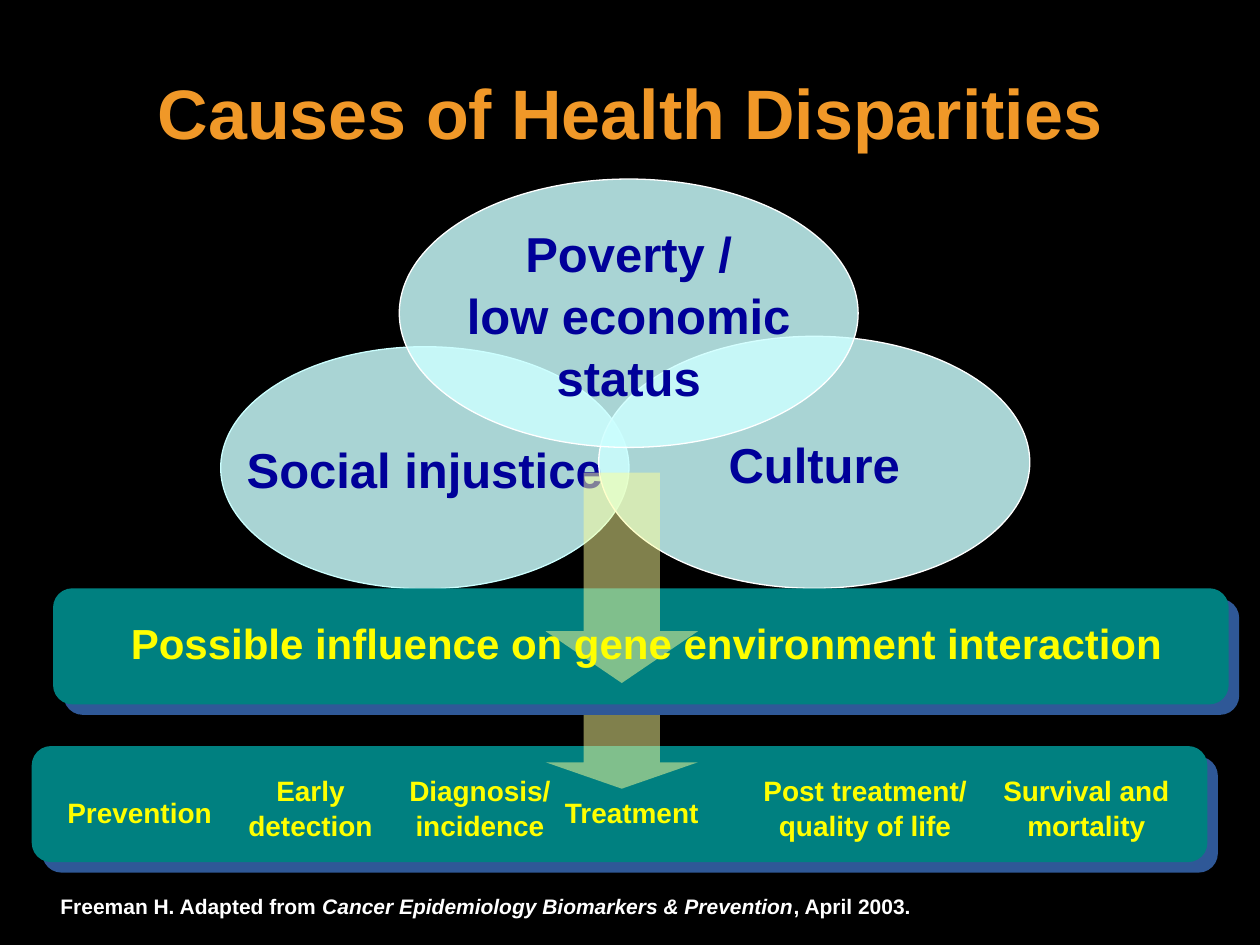
import pptx
import pptx.dml.color
import pptx.enum.shapes
import pptx.enum.text
import pptx.oxml
import pptx.oxml.ns
import pptx.util
from dataclasses import dataclass

Cm = pptx.util.Cm
Pt = pptx.util.Pt
SHAPE = pptx.enum.shapes.MSO_SHAPE
ALIGN = pptx.enum.text.PP_ALIGN
ANCHOR = pptx.enum.text.MSO_ANCHOR


@dataclass(frozen=True)
class Theme:
    font: str = "Arial"
    line_spacing: float = 1.05
    background: str = "000000"
    title: str = "F09828"
    label: str = "FFFF00"
    cause_text: str = "000099"
    source: str = "FFFFFF"
    band: str = "008080"
    band_shadow: str = "2F5897"
    ellipse: str = "CCFFFF"
    outline: str = "FFFFFF"
    arrow: str = "FFFF99"
    title_size: int = 40
    cause_size: int = 28
    band_size: int = 24
    stage_size: int = 16
    source_size: int = 12


THEME = Theme()


def color(code):
    return pptx.dml.color.RGBColor.from_string(code)


def style_paragraph(para, size, code, align=ALIGN.CENTER):
    para.alignment = align
    para.line_spacing = THEME.line_spacing
    para.font.name = THEME.font
    para.font.size = Pt(size)
    para.font.bold = True
    para.font.color.rgb = color(code)


def add_label(page, place, text, size, code):
    box = page.shapes.add_textbox(*map(Cm, place))
    box.text_frame.word_wrap = True
    para = box.text_frame.paragraphs[0]
    para.text = text
    style_paragraph(para, size, code)
    return para


def add_filled(page, kind, place, code, opacity=100):
    shape = page.shapes.add_shape(kind, *map(Cm, place))
    shape.shadow.inherit = False
    shape.fill.solid()
    shape.fill.fore_color.rgb = color(code)
    shape.line.fill.background()
    if opacity < 100:
        fill = shape.fill._xPr.find(pptx.oxml.ns.qn("a:solidFill"))
        fill[0].append(pptx.oxml.parse_xml(
            f'<a:alpha {pptx.oxml.ns.nsdecls("a")} val="{opacity * 1000}"/>'))
    return shape


def add_band(page, left, top):
    band = add_filled(page, SHAPE.FLOWCHART_ALTERNATE_PROCESS,
                      (left, top, 23.7, 2.34), THEME.band)
    effects = band._element.spPr.find(pptx.oxml.ns.qn("a:effectLst"))
    effects.append(pptx.oxml.parse_xml(
        f'<a:outerShdw {pptx.oxml.ns.nsdecls("a")} blurRad="0" dist="{Pt(8.5)}" '
        f'dir="2700000" algn="ctr" rotWithShape="0">'
        f'<a:srgbClr val="{THEME.band_shadow}"/></a:outerShdw>'))


def add_cause(page, place, text, outline):
    ellipse = add_filled(page, SHAPE.OVAL, place, THEME.ellipse, 83)
    ellipse.line.color.rgb = color(outline)
    ellipse.line.width = Pt(0.75)
    frame = ellipse.text_frame
    frame.word_wrap = False
    frame.vertical_anchor = ANCHOR.MIDDLE
    frame.paragraphs[0].text = text
    style_paragraph(frame.paragraphs[0], THEME.cause_size, THEME.cause_text)


def add_arrow(page, top, height, head):
    arrow = add_filled(page, SHAPE.DOWN_ARROW, (11, top, 3.07, height), THEME.arrow, 50)
    arrow.adjustments[0] = 0.5
    arrow.adjustments[1] = head


def add_source(page):
    para = add_label(page, (0.97, 17.86, 18.39, 0.76), "",
                     THEME.source_size, THEME.source)
    para.alignment = ALIGN.LEFT
    for text, italic in (("Freeman H. Adapted from ", False),
                         ("Cancer Epidemiology Biomarkers & Prevention", True),
                         (", April 2003.", False)):
        span = para.add_run()
        span.text = text
        span.font.italic = italic


def main():
    deck = pptx.Presentation()
    deck.slide_width, deck.slide_height = Cm(25.4), Cm(19.05)
    page = deck.slides.add_slide(deck.slide_layouts[6])
    page.background.fill.solid()
    page.background.fill.fore_color.rgb = color(THEME.background)

    # Title and source
    add_label(page, (0, 1.19, 25.4, 1.96), "Causes of Health Disparities",
              THEME.title_size, THEME.title)
    add_source(page)

    # Stages of care: one-line labels sit lower than two-line ones
    add_band(page, 0.64, 15.04)
    one_line, two_lines = (15.88, 0.94), (15.44, 1.63)
    for text, left, width, (top, height) in (
            ("Prevention", 0.81, 4.01, one_line),
            ("Early detection", 4.42, 3.68, two_lines),
            ("Diagnosis/\nincidence", 7.16, 5.03, two_lines),
            ("Treatment", 11.07, 3.33, one_line),
            ("Post treatment/\nquality of life", 15.04, 4.8, two_lines),
            ("Survival and mortality", 19.69, 4.42, two_lines)):
        add_label(page, (left, top, width, height), text,
                  THEME.stage_size, THEME.label)

    # Overlapping causes
    add_cause(page, (4.45, 6.99, 8.23, 4.88), "Social injustice", THEME.ellipse)
    add_cause(page, (12.07, 6.78, 8.69, 5.08), "Culture", THEME.outline)
    add_cause(page, (8.05, 3.61, 9.25, 5.41),
              "Poverty /\nlow economic\nstatus", THEME.outline)

    # Gene environment band between the two arrows
    add_arrow(page, 13.77, 2.13, 0.25)
    add_band(page, 1.07, 11.86)
    add_arrow(page, 9.53, 4.24, 0.34)
    add_label(page, (2.34, 12.27, 21.39, 1.27),
              "Possible influence on gene environment interaction",
              THEME.band_size, THEME.label)

    deck.save("out.pptx")


if __name__ == "__main__":
    main()
